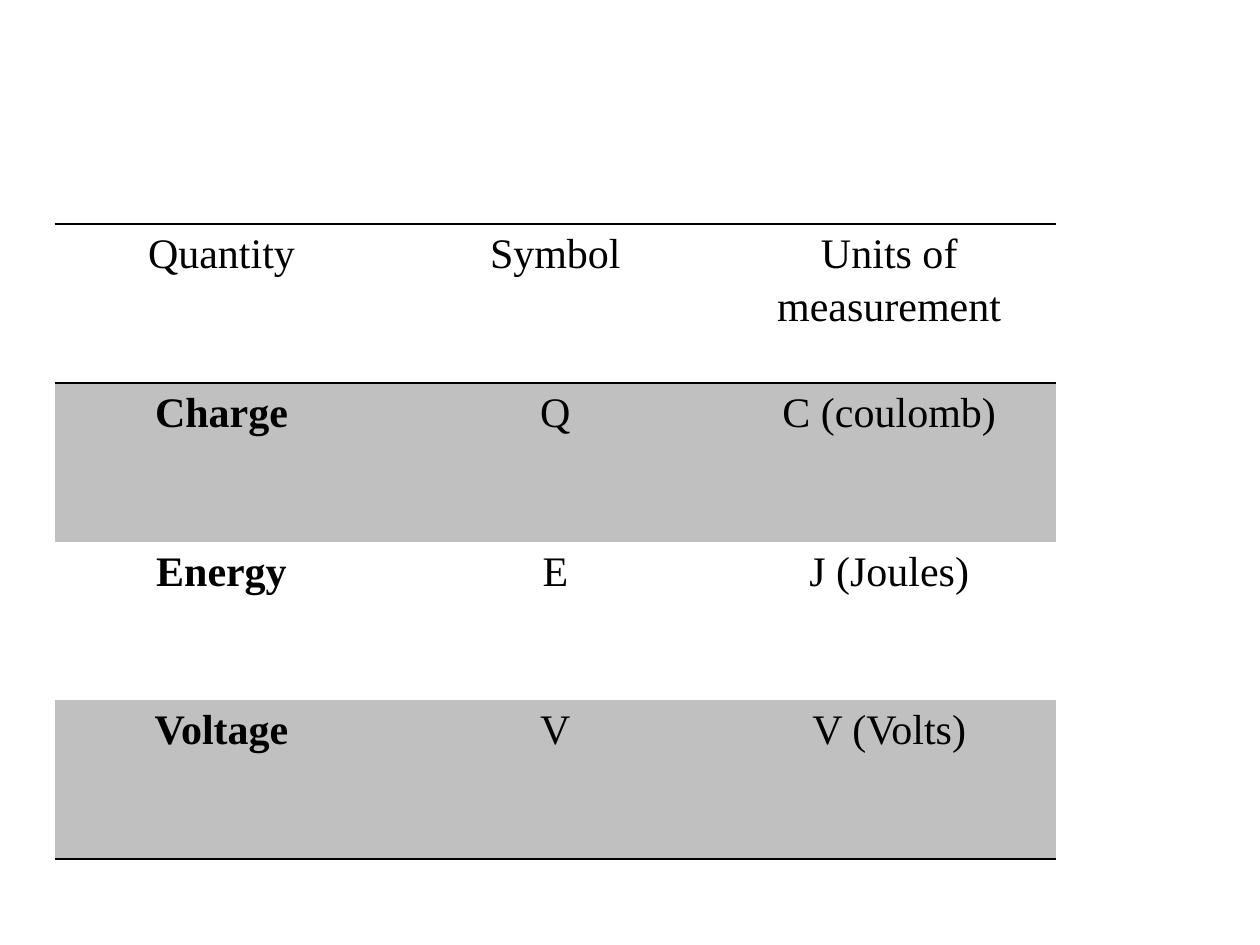
from lxml import etree
from pptx import Presentation
from pptx import util as u
from pptx.dml.color import RGBColor
from pptx.enum import text
from pptx.oxml import ns

COLORS = {"ink": "000000", "band": "C0C0C0"}
FONT = "Times New Roman"
QUANTITIES = [
    ("Quantity", "Symbol", "Units of measurement"),
    ("Charge", "Q", "C (coulomb)"),
    ("Energy", "E", "J (Joules)"),
    ("Voltage", "V", "V (Volts)"),
]
COLUMN_WIDTH = u.Cm(6.73)
ROW_HEIGHT = u.Cm(3.2)


def set_borders(cell, ruled_sides):
    """Draw a 1 pt line on the ruled sides and none on the others."""
    properties = cell._tc.get_or_add_tcPr()
    for side in "LRTB":
        line = etree.SubElement(properties, ns.qn(f"a:ln{side}"), w=str(u.Pt(1)))
        if side in ruled_sides:
            fill = etree.SubElement(line, ns.qn("a:solidFill"))
            etree.SubElement(fill, ns.qn("a:srgbClr"), val=COLORS["ink"])
        else:
            etree.SubElement(line, ns.qn("a:noFill"))


def write_cell(cell, wording, bold):
    cell.margin_left = cell.margin_right = u.Cm(0.19)
    cell.margin_top = cell.margin_bottom = 0
    cell.vertical_anchor = text.MSO_ANCHOR.TOP
    cell.text_frame.text = wording
    paragraph = cell.text_frame.paragraphs[0]
    paragraph.alignment = text.PP_ALIGN.CENTER
    paragraph.line_spacing = 1.15
    font = paragraph.runs[0].font
    font.name, font.size, font.bold = FONT, u.Pt(24), bold
    font.color.rgb = RGBColor.from_string(COLORS["ink"])


def shade_cell(cell, banded):
    if banded:
        cell.fill.solid()
        cell.fill.fore_color.rgb = RGBColor.from_string(COLORS["band"])
    else:
        cell.fill.background()


def add_quantity_table(slide):
    row_count, column_count = len(QUANTITIES), len(QUANTITIES[0])
    table = slide.shapes.add_table(
        row_count, column_count, u.Cm(1.1), u.Cm(4.52),
        COLUMN_WIDTH * column_count, ROW_HEIGHT * row_count).table
    table.first_row = table.horz_banding = False
    for column in table.columns:
        column.width = COLUMN_WIDTH
    # Rules lie above and below the header and under the last row
    ruled_sides = {0: "TB", 1: "T", row_count - 1: "B"}
    for r, quantity in enumerate(QUANTITIES):
        table.rows[r].height = ROW_HEIGHT
        for c, wording in enumerate(quantity):
            cell = table.cell(r, c)
            write_cell(cell, wording, bold=r > 0 and c == 0)
            set_borders(cell, ruled_sides.get(r, ""))
            shade_cell(cell, banded=r % 2 == 1)


def main():
    presentation = Presentation()
    presentation.slide_width, presentation.slide_height = u.Cm(25.4), u.Cm(19.05)
    slide = presentation.slides.add_slide(presentation.slide_layouts[6])
    add_quantity_table(slide)
    presentation.save("out.pptx")


if __name__ == "__main__":
    main()
